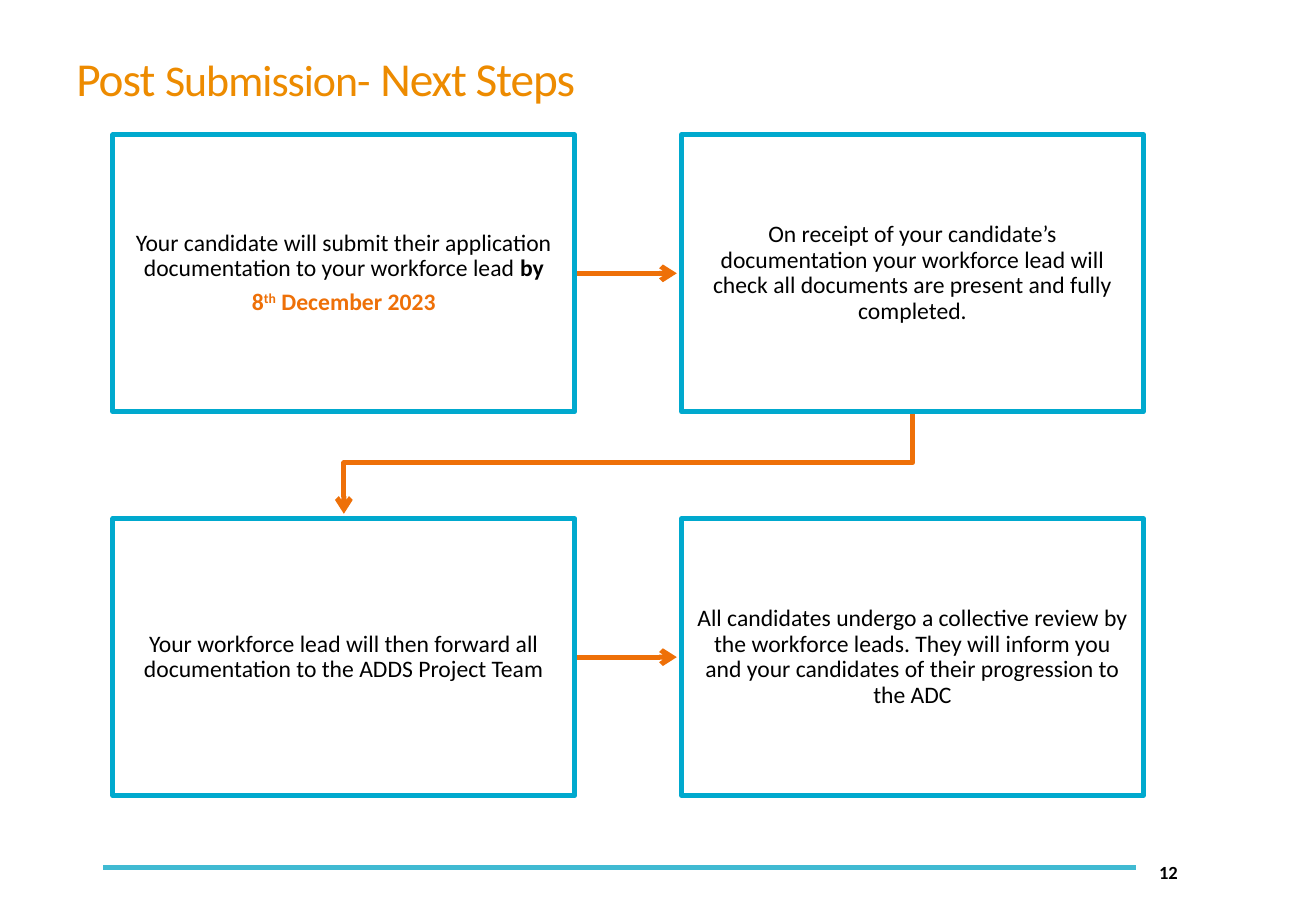
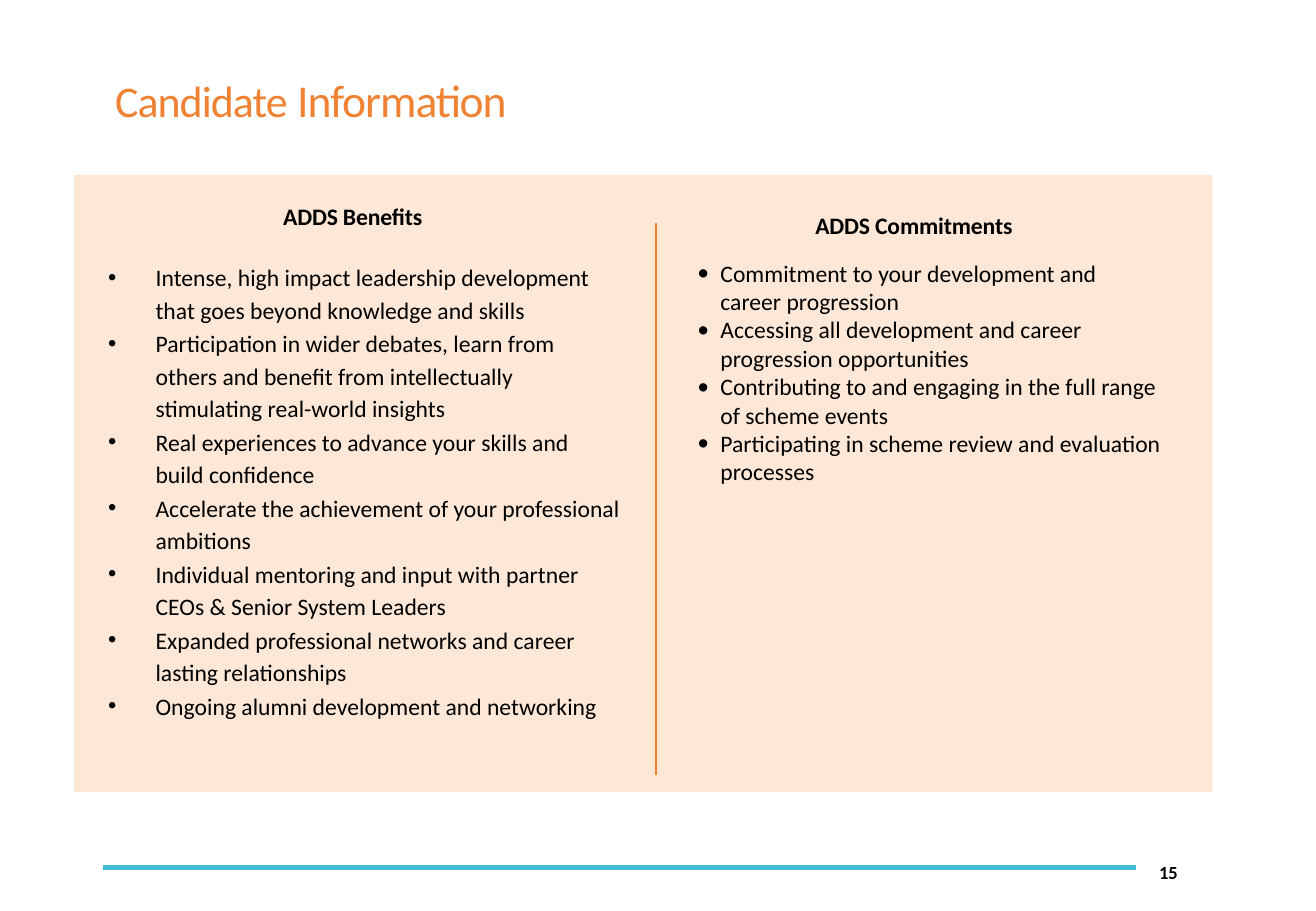
from dataclasses import dataclass

from lxml.etree import SubElement
from pptx import Presentation
from pptx.dml.color import RGBColor
from pptx.enum.shapes import MSO_CONNECTOR, MSO_SHAPE
from pptx.enum.text import MSO_ANCHOR, PP_ALIGN
from pptx.oxml.ns import qn
from pptx.util import Pt

EMU_PER_PX = 9144

BLACK = RGBColor(0x00, 0x00, 0x00)
WHITE = RGBColor(0xFF, 0xFF, 0xFF)
FOOTER_BLUE = RGBColor(0x40, 0xBA, 0xD2)
BOX_BLUE = RGBColor(0x00, 0xA9, 0xCE)
STEP_ORANGE = RGBColor(0xEE, 0x70, 0x08)
TITLE_AMBER = RGBColor(0xED, 0x8B, 0x00)
TITLE_ORANGE = RGBColor(0xEF, 0x82, 0x33)
DIVIDER_ORANGE = RGBColor(0xF0, 0x82, 0x25)
PANEL_PEACH = RGBColor(0xF9, 0xBC, 0x86)

STEP_WIDTH, STEP_HEIGHT = 380, 228
STEP_LEFT, STEP_TOP = 93, 111
COLUMN_PITCH, ROW_PITCH = 468, 316
ARROW_GAP = 4

BENEFITS = [
    "Intense, high impact leadership development that goes beyond knowledge and skills",
    "Participation in wider debates, learn from others and benefit from intellectually "
    "stimulating real-world insights",
    "Real experiences to advance your skills and build confidence",
    "Accelerate the achievement of your professional ambitions",
    "Individual mentoring and input with partner CEOs & Senior System Leaders",
    "Expanded professional networks and career lasting relationships",
    "Ongoing alumni development and networking",
]
COMMITMENTS = [
    "Commitment to your development and career progression",
    "Accessing all development and career progression opportunities",
    "Contributing to and engaging in the full range of scheme events",
    "Participating in scheme review and evaluation processes",
]


@dataclass
class Words:
    text: str
    size: float = 14
    bold: bool = False
    color: RGBColor = BLACK
    spacing: int = 0
    baseline: int = 0


STEPS = [
    [
        [
            Words("Your candidate will submit their application documentation "
                  "to your workforce lead "),
            Words("by", bold=True),
        ],
        [
            Words("8", bold=True, color=STEP_ORANGE),
            Words("th", bold=True, color=STEP_ORANGE, baseline=30000),
            Words(" December 2023", bold=True, color=STEP_ORANGE),
        ],
    ],
    [[Words("On receipt of your candidate’s documentation your workforce lead will "
            "check all documents are present and fully completed.")]],
    [[Words("Your workforce lead will then forward all documentation to the "
            "ADDS Project Team")]],
    [[Words("All candidates undergo a collective review by the workforce leads. "
            "They will inform you and your candidates of their progression to the ADC")]],
]


def px(*lengths):
    return [round(length * EMU_PER_PX) for length in lengths]


def apply_format(target, values):
    for attribute, value in values.items():
        setattr(target, attribute, value)


def add_bullet(paragraph, indent, bullet_font):
    properties = paragraph._p.get_or_add_pPr()
    hanging = px(indent)[0]
    properties.set("marL", str(hanging))
    properties.set("indent", str(-hanging))
    SubElement(properties, qn("a:buFont"), typeface=bullet_font)
    SubElement(properties, qn("a:buChar"), char="•")


def write(frame, paragraphs, layout=None, inset=None, anchor=MSO_ANCHOR.TOP, bullet=None):
    apply_format(frame, {"word_wrap": True, "vertical_anchor": anchor})
    if inset is not None:
        sides = ("margin_left", "margin_top", "margin_right", "margin_bottom")
        apply_format(frame, dict.fromkeys(sides, px(inset)[0]))
    for index, pieces in enumerate(paragraphs):
        paragraph = frame.add_paragraph() if index else frame.paragraphs[0]
        if bullet:
            add_bullet(paragraph, *bullet)
        apply_format(paragraph, layout or {})
        for words in pieces:
            run = paragraph.add_run()
            run.text = words.text
            apply_format(run.font, {"name": "Calibri", "size": Pt(words.size), "bold": words.bold})
            run.font.color.rgb = words.color
            for name, value in (("spc", words.spacing), ("baseline", words.baseline)):
                if value:
                    run._r.get_or_add_rPr().set(name, str(value))


def add_text(slide, place, paragraphs, **options):
    write(slide.shapes.add_textbox(*px(*place)).text_frame, paragraphs, **options)


def add_title(slide, place, pieces):
    add_text(slide, place, [pieces], layout={"line_spacing": 0.9}, anchor=MSO_ANCHOR.MIDDLE)


def add_rule(slide, ends, color, width, kind=MSO_CONNECTOR.STRAIGHT, arrow=False):
    rule = slide.shapes.add_connector(kind, *px(*ends))
    rule.line.color.rgb = color
    rule.line.width = Pt(width)
    properties = rule.element.spPr
    if arrow:
        SubElement(properties.find(qn("a:ln")), qn("a:tailEnd"), type="arrow")
    SubElement(properties, qn("a:effectLst"))
    return rule


def add_down_elbow(slide, start_x, start_y, end_x, end_y):
    center_x, center_y = (start_x + end_x) / 2, (start_y + end_y) / 2
    half_drop, half_run = (end_y - start_y) / 2, (start_x - end_x) / 2
    ends = (center_x - half_drop, center_y - half_run, center_x + half_drop, center_y + half_run)
    elbow = add_rule(slide, ends, STEP_ORANGE, 3, MSO_CONNECTOR.ELBOW, arrow=True)
    elbow.element.spPr.find(qn("a:xfrm")).set("rot", "5400000")


def add_rectangle(slide, place, fill):
    rectangle = slide.shapes.add_shape(MSO_SHAPE.RECTANGLE, *px(*place))
    rectangle.shadow.inherit = False
    rectangle.fill.solid()
    rectangle.fill.fore_color.rgb = fill
    return rectangle


def add_step(slide, left, top, paragraphs):
    step = add_rectangle(slide, (left, top, STEP_WIDTH, STEP_HEIGHT), WHITE)
    step.line.color.rgb = BOX_BLUE
    step.line.width = Pt(3)
    layout = {"alignment": PP_ALIGN.CENTER, "line_spacing": 0.9, "space_after": Pt(5)}
    write(step.text_frame, paragraphs, layout, inset=11, anchor=MSO_ANCHOR.MIDDLE)


def add_panel(slide, place):
    panel = add_rectangle(slide, place, PANEL_PEACH)
    panel.line.fill.background()
    color = panel.element.spPr.find(qn("a:solidFill")).find(qn("a:srgbClr"))
    SubElement(color, qn("a:alpha"), val="33000")


def add_heading(slide, place, text):
    add_text(slide, place, [[Words(text, bold=True, spacing=-10)]], inset=0)


def add_list(slide, place, items, **options):
    add_text(slide, place, [[Words(item)] for item in items], **options)


def start_slide(deck, number):
    slide = deck.slides.add_slide(deck.slide_layouts[6])
    add_rule(slide, (85, 714, 935, 714), FOOTER_BLUE, 3)
    add_text(slide, (944, 698, 136, 40), [[Words(number, 11, True)]], anchor=MSO_ANCHOR.MIDDLE)
    return slide


def build_next_steps(deck):
    slide = start_slide(deck, "12")
    right_column = STEP_LEFT + COLUMN_PITCH
    second_row = STEP_TOP + ROW_PITCH
    for top in (STEP_TOP, second_row):
        middle = top + STEP_HEIGHT / 2
        ends = (STEP_LEFT + STEP_WIDTH, middle, right_column - ARROW_GAP, middle)
        add_rule(slide, ends, STEP_ORANGE, 3, arrow=True)
    add_down_elbow(slide, right_column + STEP_WIDTH / 2, STEP_TOP + STEP_HEIGHT,
                   STEP_LEFT + STEP_WIDTH / 2, second_row - ARROW_GAP)
    for index, paragraphs in enumerate(STEPS):
        row, column = divmod(index, 2)
        add_step(slide, STEP_LEFT + column * COLUMN_PITCH, STEP_TOP + row * ROW_PITCH, paragraphs)
    add_title(slide, (53, 43, 614, 47), [
        Words(text, size, color=TITLE_AMBER, spacing=-60)
        for text, size in (("Post ", 28), ("Submission-", 26), (" Next Steps", 28))
    ])


def build_candidate_information(deck):
    slide = start_slide(deck, "15")
    add_title(slide, (85, 61, 536, 47), [
        Words(text, size, color=TITLE_ORANGE, spacing=-60)
        for text, size in (("Candidate", 26), (" Information", 27))
    ])
    add_panel(slide, (61, 144, 937, 508))
    add_rule(slide, (540, 184, 540, 638), DIVIDER_ORANGE, 1)
    add_heading(slide, (233, 166, 128, 25), "ADDS Benefits")
    add_heading(slide, (671, 174, 194, 25), "ADDS Commitments")
    add_list(slide, (89, 213, 422, 452), BENEFITS, inset=0, bullet=(39, "Arial"),
             layout={"line_spacing": 1.15, "space_after": Pt(0.5)})
    add_list(slide, (564, 208, 403, 199), COMMITMENTS, bullet=(19, "Calibri"))


def main():
    deck = Presentation()
    deck.slide_width, deck.slide_height = px(1083, 750)
    build_next_steps(deck)
    build_candidate_information(deck)
    deck.save("out.pptx")


if __name__ == "__main__":
    main()
